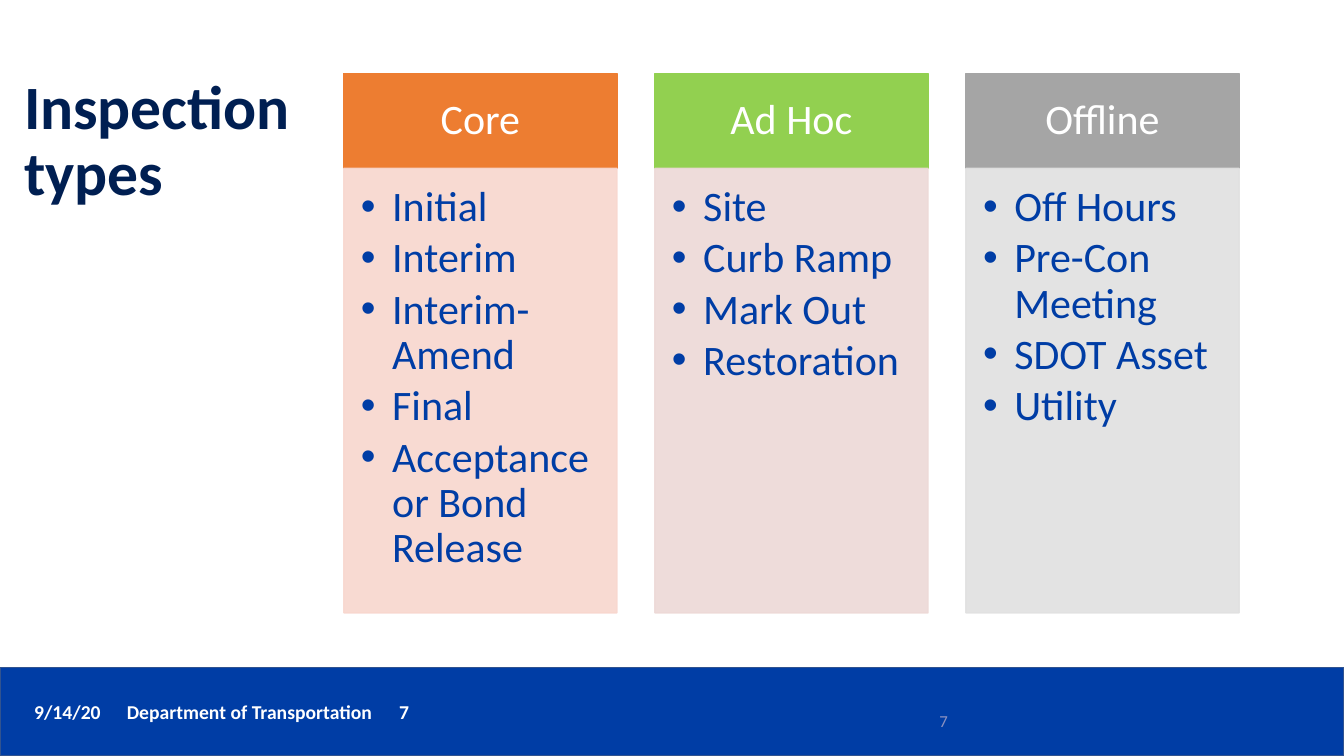
from lxml.etree import SubElement as Sub
from pptx import Presentation
from pptx.dml.color import RGBColor as RGB
from pptx.enum.shapes import MSO_SHAPE as Shape
from pptx.enum.text import MSO_ANCHOR as Anchor, PP_ALIGN as Align
from pptx.oxml.ns import qn
from pptx.util import Inches, Pt

WHITE = RGB(0xFF, 0xFF, 0xFF)
BLUE = RGB(0x00, 0x3D, 0xA5)
NAVY = RGB(0x00, 0x1F, 0x52)
EDGE = RGB(0x31, 0x53, 0x8F)
LILAC = RGB(0x8C, 0x92, 0xC1)
ORANGE = RGB(0xED, 0x7D, 0x31)
PEACH = RGB(0xF8, 0xD7, 0xCE)
GREEN = RGB(0x92, 0xD0, 0x50)
ROSE = RGB(0xED, 0xD9, 0xD7)
GREY = RGB(0xA5, 0xA5, 0xA5)
PALE = RGB(0xE1, 0xE1, 0xE1)

TITLE = "Inspection types"
FOOTER = "9/14/20\tDepartment of Transportation\t7"
NUMBER = "7"
COLUMNS = [
    ("Core", ORANGE, PEACH,
     ["Initial", "Interim", "Interim-Amend", "Final", "Acceptance or Bond Release"]),
    ("Ad Hoc", GREEN, ROSE,
     ["Site", "Curb Ramp", "Mark Out", "Restoration"]),
    ("Offline", GREY, PALE,
     ["Off Hours", "Pre-Con Meeting", "SDOT Asset", "Utility"]),
]

LEFT, RIGHT, TOP = 3.41, 12.29, 0.73
WIDTH, HEAD, BODY = 2.71, 0.94, 4.41
STEP = (RIGHT - LEFT - WIDTH) / (len(COLUMNS) - 1)
TABS = [0.92, 3.62]
INDENT = 0.31


def write(shape, lines, size, color, bold=False, align=Align.LEFT,
          anchor=Anchor.TOP, insets=(0.1, 0.05, 0.1, 0.05),
          bullet=False, tabs=(), **spacing):
    frame = shape.text_frame
    frame.word_wrap = True
    frame.vertical_anchor = anchor
    for side, inset in zip(("left", "top", "right", "bottom"), insets):
        setattr(frame, "margin_" + side, Inches(inset))
    for i, line in enumerate(lines):
        par = frame.add_paragraph() if i else frame.paragraphs[0]
        props = par._p.get_or_add_pPr()
        if bullet:
            props.set("marL", str(Inches(INDENT)))
            props.set("indent", str(-Inches(INDENT)))
            Sub(props, qn("a:buFont"), typeface="Arial")
            Sub(props, qn("a:buChar"), char="•")
        if tabs:
            stops = Sub(props, qn("a:tabLst"))
            for tab in tabs:
                Sub(stops, qn("a:tab"), pos=str(Inches(tab)), algn="l")
        par.alignment = align
        for key, value in spacing.items():
            setattr(par, key, value)
        run = par.add_run()
        run.text = line
        look = {"name": "Calibri", "size": Pt(size), "bold": bold}
        for key, value in look.items():
            setattr(run.font, key, value)
        run.font.color.rgb = color


def block(slide, x, y, w, h, fill, edge, alpha=100):
    shape = slide.shapes.add_shape(
        Shape.RECTANGLE, Inches(x), Inches(y), Inches(w), Inches(h))
    shape.shadow.inherit = False
    shape.fill.solid()
    shape.fill.fore_color.rgb = fill
    shape.line.color.rgb = edge
    shape.line.width = Pt(1)
    if alpha < 100:
        for color in shape._element.spPr.iter(qn("a:srgbClr")):
            Sub(color, qn("a:alpha"), val=str(alpha * 1000))
    return shape


def label(slide, x, y, w, h):
    return slide.shapes.add_textbox(Inches(x), Inches(y), Inches(w), Inches(h))


def main():
    deck = Presentation()
    deck.slide_width, deck.slide_height = Inches(13.33), Inches(7.5)
    slide = deck.slides.add_slide(deck.slide_layouts[6])

    block(slide, 0, 6.62, 13.33, 0.88, BLUE, EDGE)
    write(label(slide, 0.24, 6.89, 10.06, 0.34), [FOOTER], 14, WHITE,
          bold=True, tabs=TABS)
    write(label(slide, 0.14, 0.69, 2.9, 1.45), [TITLE], 44, NAVY,
          bold=True, anchor=Anchor.MIDDLE, line_spacing=0.9)
    write(label(slide, 7.17, 6.95, 2.33, 0.4), [NUMBER], 12, LILAC,
          align=Align.RIGHT, anchor=Anchor.MIDDLE)

    for i, (name, dark, light, items) in enumerate(COLUMNS):
        x = LEFT + i * STEP
        head = block(slide, x, TOP, WIDTH, HEAD, dark, dark)
        write(head, [name], 30, WHITE, align=Align.CENTER,
              anchor=Anchor.MIDDLE, insets=(0.23, 0.13, 0.23, 0.13),
              line_spacing=0.9)
        body = block(slide, x, TOP + HEAD, WIDTH, BODY, light, light, alpha=90)
        write(body, items, 30, BLUE, insets=(0.17, 0.17, 0.23, 0.26),
              bullet=True, line_spacing=0.9, space_after=Pt(4.2))

    deck.save("out.pptx")


if __name__ == "__main__":
    main()
